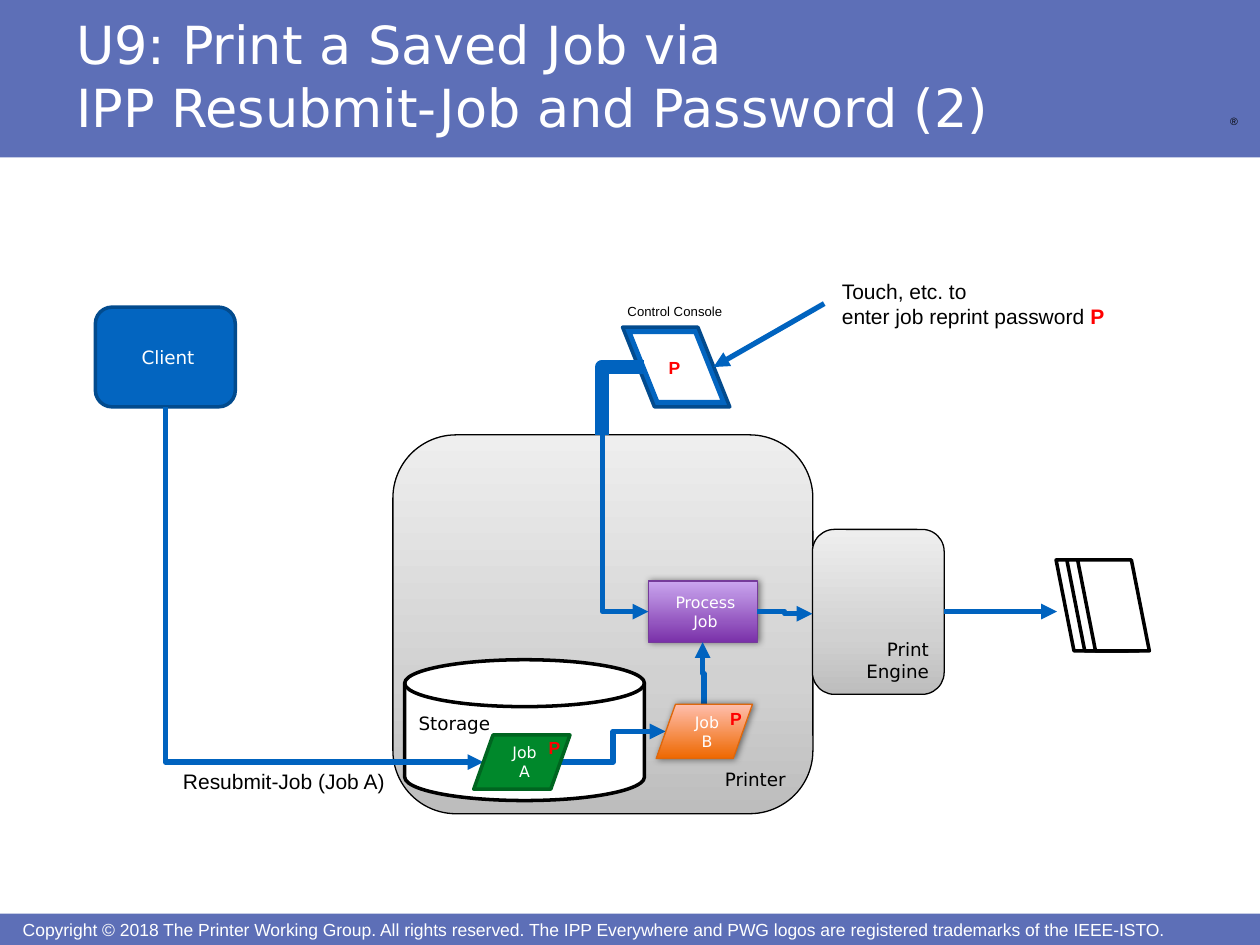
from lxml import etree
from pptx import Presentation
from pptx.dml.color import RGBColor
from pptx.enum.shapes import MSO_CONNECTOR, MSO_SHAPE
from pptx.enum.text import MSO_ANCHOR, PP_ALIGN
from pptx.oxml.ns import qn
from pptx.util import Pt

RECT, ROUND = MSO_SHAPE.RECTANGLE, MSO_SHAPE.ROUNDED_RECTANGLE
SLANT, DATA = MSO_SHAPE.PARALLELOGRAM, MSO_SHAPE.FLOWCHART_DATA
DISK, STEP = MSO_SHAPE.FLOWCHART_MAGNETIC_DISK, MSO_SHAPE.FLOWCHART_PROCESS
ELBOW, STRAIGHT = MSO_CONNECTOR.ELBOW, MSO_CONNECTOR.STRAIGHT
TOP, MIDDLE, BOTTOM = MSO_ANCHOR.TOP, MSO_ANCHOR.MIDDLE, MSO_ANCHOR.BOTTOM
LEFT, CENTER, RIGHT = PP_ALIGN.LEFT, PP_ALIGN.CENTER, PP_ALIGN.RIGHT

WHITE = RGBColor(0xFF, 0xFF, 0xFF)
BLACK = RGBColor(0x00, 0x00, 0x00)
RED = RGBColor(0xFF, 0x00, 0x00)
BAND = RGBColor(0x5D, 0x6F, 0xB7)
BLUE = RGBColor(0x03, 0x65, 0xC0)
NAVY = RGBColor(0x02, 0x4B, 0x8E)
WIRE = RGBColor(0x00, 0x63, 0xBF)
GREEN = RGBColor(0x00, 0x88, 0x2B)
PINE = RGBColor(0x00, 0x65, 0x20)
PLUM = RGBColor(0x75, 0x3B, 0x9A)
RUST = RGBColor(0xDE, 0x67, 0x0B)

# Gradients run from bottom to top: (percent, colour)
GRAY = [(0, RGBColor(0xBD, 0xBD, 0xBD)), (35, RGBColor(0xD1, 0xD1, 0xD1)),
        (100, RGBColor(0xEE, 0xEE, 0xEE))]
VIOLET = [(0, RGBColor(0x7A, 0x31, 0xA9)), (100, RGBColor(0xCA, 0xA6, 0xEF))]
ORANGE = [(0, RGBColor(0xEE, 0x68, 0x00)), (100, RGBColor(0xFF, 0xBE, 0xAD))]

SANS, ARIAL = "DejaVu Sans", "Arial"
SNUG = (4.5, 4.5, 4.5, 4.5)
SIDES = ("margin_left", "margin_top", "margin_right", "margin_bottom")


def node(parent, tag, **attrs):
    return etree.SubElement(parent, qn(tag), {k: str(v) for k, v in attrs.items()})


class Board:
    """Holds the text style and the slide being drawn."""

    def __init__(self, slide):
        self.slide = slide
        self.font = {"name": SANS, "size": Pt(10.5), "bold": False}
        self.color = BLACK

    def label(self, frame, rows, anchor=MIDDLE, align=LEFT, inset=(5, 3, 5, 3),
              indent=3, color=None, **font):
        """Each row is a paragraph: a string or a list of (text, format)."""
        look = {"word_wrap": True, "vertical_anchor": anchor}
        look.update(zip(SIDES, map(Pt, inset)))
        for key, value in look.items():
            setattr(frame, key, value)
        for i, row in enumerate(rows):
            para = frame.add_paragraph() if i else frame.paragraphs[0]
            para.alignment = align
            para._p.get_or_add_pPr().set("marL", str(Pt(indent)))
            for text, own in [(row, {})] if isinstance(row, str) else row:
                form = {**self.font, **font, **own}
                tint = form.pop("color", color or self.color)
                for j, line in enumerate(text.split("\n")):
                    if j:
                        para.add_line_break()
                    run = para.add_run()
                    run.text = line
                    for key, value in form.items():
                        setattr(run.font, key, value)
                    run.font.color.rgb = tint

    def text(self, box, rows, **form):
        item = self.slide.shapes.add_textbox(*map(Pt, box))
        self.label(item.text_frame, rows, **form)

    def shape(self, kind, box, fill, edge=None, width=2, rows=(), flip=False,
              slant=None, glow=False, **form):
        item = self.slide.shapes.add_shape(kind, *map(Pt, box))
        item.shadow.inherit = False
        props = item._element.spPr
        if isinstance(fill, list):
            item.fill.gradient()
            item.fill.gradient_angle = 90
            stops = props.find(".//" + qn("a:gsLst"))
            for old in list(stops):
                stops.remove(old)
            for spot, tint in fill:
                node(node(stops, "a:gs", pos=spot * 1000), "a:srgbClr", val=tint)
        else:
            item.fill.solid()
            item.fill.fore_color.rgb = fill
        if edge is None:
            item.line.fill.background()
        else:
            item.line.color.rgb = edge
            item.line.width = Pt(width)
        if flip:
            props.find(qn("a:xfrm")).set("flipV", "1")
        if slant:
            item.adjustments[0] = slant
        if glow:
            shade = node(props.find(qn("a:effectLst")), "a:outerShdw",
                         blurRad=Pt(4), dist=Pt(1), dir=0, rotWithShape=0)
            node(node(shade, "a:srgbClr", val=BLACK), "a:alpha", val=50000)
        self.label(item.text_frame, rows, **form)

    def line(self, start, end, kind=ELBOW, width=3, head=True,
             upright=False, corner=False):
        """An upright line leaves vertically; a corner line bends once."""
        (x1, y1), (x2, y2) = start, end
        if upright:
            # Turn the end points a quarter about the centre
            cx, cy = (x1 + x2) / 2, (y1 + y2) / 2
            x1, y1, x2, y2 = (cx + cy - y1, cy + x1 - cx,
                              cx + cy - y2, cy + x2 - cx)
        item = self.slide.shapes.add_connector(kind, *map(Pt, (x1, y1, x2, y2)))
        item.line.color.rgb = WIRE
        item.line.width = Pt(width)
        props = item._element.spPr
        if upright:
            props.find(qn("a:xfrm")).set("rot", str(270 * 60000))
        if corner:
            props.find(qn("a:prstGeom")).set("prst", "bentConnector2")
        if head:
            node(props.find(qn("a:ln")), "a:tailEnd", type="triangle")
        node(props, "a:effectLst")

    def mark(self, left, top):
        self.text((left, top, 18, 20), ["P"], inset=SNUG, name=ARIAL,
                  size=Pt(10), bold=True, color=RED)


deck = Presentation()
deck.slide_width, deck.slide_height = Pt(720), Pt(540)
board = Board(deck.slides.add_slide(deck.slide_layouts[6]))
note = {"name": ARIAL, "size": Pt(12), "anchor": TOP, "inset": (7.2, 3.6, 7.2, 3.6)}
job = {"align": CENTER, "size": Pt(9), "color": WHITE}

# Header and footer
board.shape(RECT, (0, 522, 720, 18), BAND)
board.shape(RECT, (0, 0, 720, 90), BAND)
board.text((694, 62, 19.5, 14), ["®"], anchor=TOP, inset=SNUG, indent=4.5,
           name=ARIAL, size=Pt(6))
board.text((10, 525, 673, 12), [
    "Copyright © 2018 The Printer Working Group. All rights reserved. "
    "The IPP Everywhere and PWG logos are registered trademarks of the IEEE-ISTO."],
    inset=(0, 0, 0, 0), name=ARIAL, size=Pt(10), color=WHITE)
board.text((36, 3.5, 596, 80), [
    "U9: Print a Saved Job via\nIPP Resubmit-Job and Password (2)"],
    anchor=BOTTOM, inset=SNUG, size=Pt(30), color=WHITE)

# Client, printer, engine and storage
board.shape(ROUND, (54.5, 175.5, 80, 57), BLUE, NAVY, rows=["Client"],
            align=CENTER, color=WHITE)
board.shape(ROUND, (224.5, 248.5, 240, 216.5), GRAY, BLACK, 0.75, ["Printer"],
            anchor=BOTTOM, align=RIGHT)
board.shape(ROUND, (464.25, 302.5, 75.25, 94.25), GRAY, BLACK, 0.75,
            ["Print", "Engine"], anchor=BOTTOM, align=RIGHT)
board.shape(DISK, (231.25, 377, 137, 80.5), WHITE, BLACK, rows=["Storage"],
            anchor=TOP)
board.shape(STEP, (370.5, 332, 62.25, 35), VIOLET, PLUM, 0.75, ["Process Job"],
            glow=True, **job)

# Job flow
board.line((320.25, 435.5), (380.25, 418))
board.text((94.5, 435.5, 138, 21.5), ["Resubmit-Job (Job A)"], **note)
board.line((402.25, 402.5), (401.5, 367), upright=True)
board.line((539.5, 349.5), (604, 349.5), STRAIGHT)

# Printed pages
for i in range(3):
    board.shape(SLANT, (603.5 + 6.15 * i, 320, 41, 52), WHITE, BLACK, flip=True)

board.line((432.75, 349.5), (464.25, 350.75))
board.line((94.5, 232.5), (276.25, 435.5), upright=True, corner=True)

# Jobs A and B
board.shape(DATA, (270.75, 420, 55, 31), GREEN, PINE, rows=["Job", "A"], **job)
board.shape(DATA, (375, 402.5, 55, 31), ORANGE, RUST, 0.75, ["Job", "B"],
            glow=True, **job)

# Control console
board.shape(SLANT, (355.75, 187, 61.25, 45.5), BLUE, NAVY, flip=True, slant=0.4)
board.shape(SLANT, (360, 190, 53, 39.5), WHITE, BLUE, flip=True, slant=0.4)
board.line((344.25, 248.5), (368, 209.5), width=8, head=False,
           upright=True, corner=True)
board.text((348.5, 170, 75, 16.5), ["Control Console"], **{**note, "size": Pt(7.5)})
board.line((344.25, 248.5), (370.5, 349.5), upright=True, corner=True)

# Password marks and entry note
for spot in [(306, 417), (409.75, 400.5), (374.5, 200)]:
    board.mark(*spot)
board.line((471, 173.5), (407.75, 209.75), STRAIGHT)
board.text((471, 155.5, 172, 36), [
    "Touch, etc. to",
    [("enter job reprint password ", {}), ("P", {"bold": True, "color": RED})]], **note)

deck.save("out.pptx")
